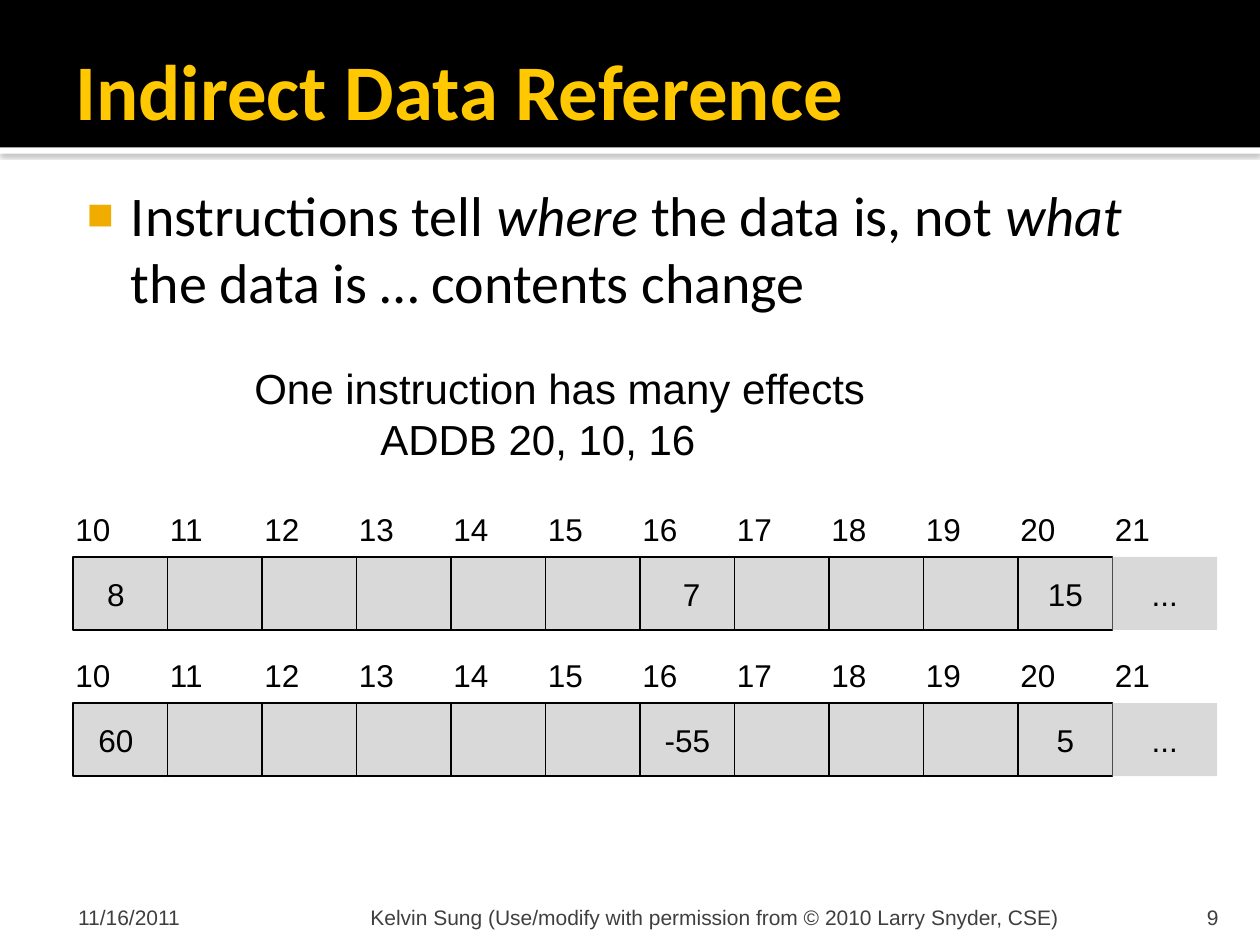
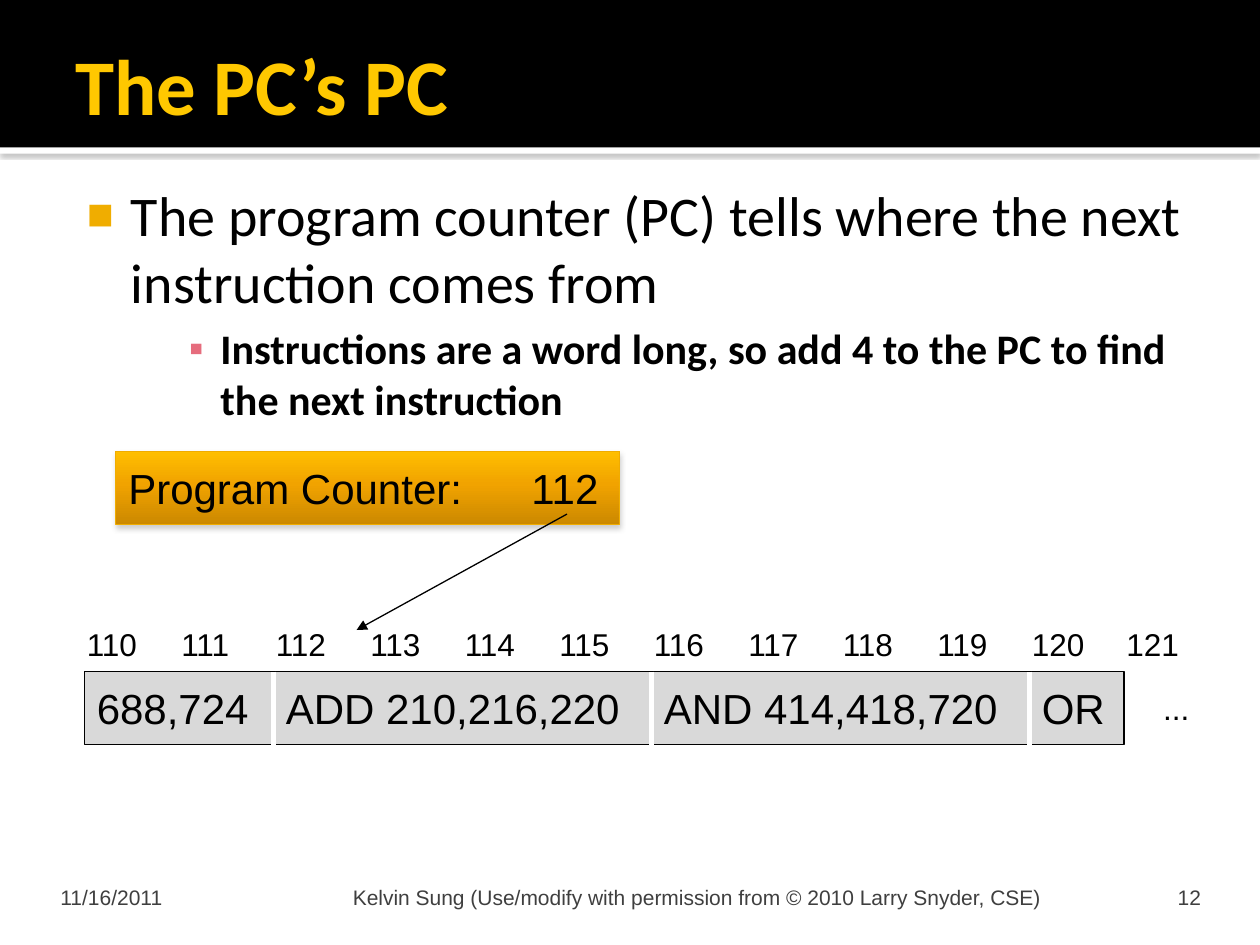
"""Build two slides on indirect data reference and the program counter."""
import copy

import lxml.etree
import pptx
import pptx.dml.color
import pptx.enum.shapes
import pptx.enum.text
import pptx.oxml.ns
import pptx.util

Inches = pptx.util.Inches
Pt = pptx.util.Pt
qn = pptx.oxml.ns.qn
child = lxml.etree.SubElement
Anchor = pptx.enum.text.MSO_ANCHOR
Align = pptx.enum.text.PP_ALIGN

BLACK, WHITE, GREY, FOOTER_INK = "000000", "FFFFFF", "D9D9D9", "3F3F3F"
TITLE_GOLD, BULLET_GOLD, BULLET_PINK, BORDER_GOLD = "FFC800", "F0AD00", "E66C7D", "F0AC00"
COUNTER_STOPS = [(0, "FFBF00"), (0.45, "F1A300"), (1, "CC8900")]
CELL_WIDTH, CELL_HEIGHT, CELL_COUNT = 0.75, 0.58, 11
LABEL_LEFT, LABEL_RISE = 0.08, 0.42


def color(hex_string):
    return pptx.dml.color.RGBColor.from_string(hex_string)


def add_box(page, place, lines=(), size=18, font="Arial", ink=BLACK, bold=False, align=Align.LEFT,
            anchor=Anchor.TOP, insets=(0.1, 0.05, 0.1, 0.05), wrap=False,
            fill=None, outline=None, outline_width=0.75, shadow=None):
    place = [Inches(length) for length in place]
    if fill:
        box = page.shapes.add_shape(pptx.enum.shapes.MSO_SHAPE.RECTANGLE, *place)
        box.fill.solid()
        box.fill.fore_color.rgb = color(fill)
        box.shadow.inherit = False
        if outline:
            box.line.color.rgb = color(outline)
            box.line.width = Pt(outline_width)
        else:
            box.line.fill.background()
        if shadow:
            alpha, blur, distance = shadow
            effects = box._element.spPr.find(qn("a:effectLst"))
            outer = child(effects, qn("a:outerShdw"), blurRad=str(Pt(blur)), dist=str(Pt(distance)),
                          dir="5400000", algn="t", rotWithShape="0")
            tint = child(outer, qn("a:srgbClr"), val="808080")
            child(tint, qn("a:alpha"), val=str(alpha * 1000))
    else:
        box = page.shapes.add_textbox(*place)
    frame = box.text_frame
    frame.word_wrap = wrap
    frame.vertical_anchor = anchor
    frame.margin_left, frame.margin_top, frame.margin_right, frame.margin_bottom = map(Inches, insets)
    for number, line in enumerate(lines):
        para = frame.add_paragraph() if number else frame.paragraphs[0]
        para.alignment = align
        for text, italic in [(line, False)] if isinstance(line, str) else line:
            span = para.add_run()
            span.text = text
            span.font.name, span.font.size = font, Pt(size)
            span.font.bold, span.font.italic = bold, italic
            span.font.color.rgb = color(ink)
    return box


deck = pptx.Presentation()
deck.slide_width, deck.slide_height = Inches(10), Inches(7.5)

outlines = [
    ("Indirect Data Reference", 1.08, "9", 0.5, 7.08,
     [[("Instructions tell ", False), ("where", True), (" the data is, not ", False),
       ("what", True), (" the data is … contents change", False)]]),
    ("The PC’s PC", 1, "12", 0.36, 6.92,
     ["The program counter (PC) tells where the next instruction comes from",
      "Instructions are a word long, so add 4 to the PC to find the next instruction"]),
]
bullet_levels = [("■", BULLET_GOLD, 80, 0.48, -0.35), ("▪", BULLET_PINK, 100, 1.19, -0.25)]

for title, title_height, page_number, footer_left, footer_top, points in outlines:
    page = deck.slides.add_slide(deck.slide_layouts[6])
    page.background.fill.solid()
    page.background.fill.fore_color.rgb = color(WHITE)
    add_box(page, (0, 1.17, 10, 0.05), fill=WHITE, shadow=(60, 2.5, 0.8))
    add_box(page, (0, 0, 10, 1.17), fill=BLACK)
    for offset, width, text, align, left_inset, right_inset in [
        (0, 2.33, "11/16/2011", Align.LEFT, 0.12, 0.05),
        (2.39, 6.02, "Kelvin Sung (Use/modify with permission from © 2010 Larry Snyder, CSE)",
         Align.LEFT, 0.05, 0.05),
        (8.47, 0.8, page_number, Align.RIGHT, 0.1, 0.1),
    ]:
        add_box(page, (footer_left + offset, footer_top, width, 0.3), [text], 12, ink=FOOTER_INK,
                align=align, anchor=Anchor.BOTTOM, insets=(left_inset, 0.05, right_inset, 0), wrap=True)
    add_box(page, (0.5, 0.17, 9, title_height), [title], 45, "Calibri", TITLE_GOLD, True,
            anchor=Anchor.MIDDLE, insets=(0.1, 0.05, 0.05, 0.05), wrap=True)
    body = add_box(page, (0.5, 1.33, 9, 5.67), points, 32, "Calibri",
                   insets=(0.06, 0.1, 0.1, 0.05), wrap=True)
    for level, para in enumerate(body.text_frame.paragraphs):
        symbol, tint, percent, margin, indent = bullet_levels[level]
        if level:
            para.space_before = Pt(4.8)
            para.runs[0].font.size = Pt(24)
            para.runs[0].font.bold = True
        settings = para._p.get_or_add_pPr()
        settings.set("marL", str(Inches(margin)))
        settings.set("indent", str(Inches(indent)))
        child(child(settings, qn("a:buClr")), qn("a:srgbClr"), val=tint)
        child(settings, qn("a:buSzPct"), val=str(percent * 1000))
        child(settings, qn("a:buFont"), typeface="Arial")
        child(settings, qn("a:buChar"), char=symbol)

reference_page, counter_page = deck.slides

effects_note = add_box(reference_page, (1.92, 2.83, 5.12, 0.91),
                       ["One instruction has many effects", "ADDB 20, 10, 16"], 24)
effects_note.text_frame.paragraphs[1]._p.get_or_add_pPr().set("marL", str(Inches(1)))

for cell_top, values in [(4.42, {0: "8 ", 6: " 7", 10: "15"}), (5.58, {0: "60 ", 6: "-55", 10: "5"})]:
    for index in range(CELL_COUNT):
        add_box(reference_page, (0.58 + index * CELL_WIDTH, cell_top, CELL_WIDTH, CELL_HEIGHT),
                [values[index]] if index in values else [], align=Align.CENTER,
                anchor=Anchor.MIDDLE, fill=GREY, outline=BLACK)

for page, row_left, row_top, first_address, rest_fill in [
    (reference_page, 0.58, 4.42, 10, GREY),
    (reference_page, 0.58, 5.58, 10, GREY),
    (counter_page, 0.67, 5.33, 110, None),
]:
    for index in range(CELL_COUNT + 1):
        add_box(page, (row_left + index * CELL_WIDTH - LABEL_LEFT, row_top - LABEL_RISE, 0.62, 0.4),
                [str(first_address + index)])
    add_box(page, (row_left + CELL_COUNT * CELL_WIDTH, row_top, 0.83, CELL_HEIGHT), ["..."],
            align=Align.CENTER, anchor=Anchor.MIDDLE, fill=rest_fill)

instruction_left = 0.67
dividers = []
for instruction, byte_count in [("688,724", 2), ("ADD 210,216,220", 4), ("AND 414,418,720", 4), ("OR", 1)]:
    width = byte_count * CELL_WIDTH
    add_box(counter_page, (instruction_left, 5.33, width, CELL_HEIGHT), [instruction], 24,
            anchor=Anchor.MIDDLE, fill=GREY, outline=BLACK)
    instruction_left += width
    dividers.append((instruction_left, 5.33, instruction_left, 5.92, WHITE, 3))
dividers.pop()

counter = add_box(counter_page, (0.92, 3.58, 4, CELL_HEIGHT), ["Program Counter:\t112"], 24,
                  anchor=Anchor.MIDDLE, wrap=True, fill=BORDER_GOLD, outline=BORDER_GOLD,
                  outline_width=0.5, shadow=(38, 3.1, 2))
tabs = child(counter.text_frame.paragraphs[0]._p.get_or_add_pPr(), qn("a:tabLst"))
child(tabs, qn("a:tab"), pos=str(Inches(3.2)), algn="l")
counter.fill.gradient()
counter.fill.gradient_angle = 270
stop_list = counter._element.spPr.find(".//" + qn("a:gsLst"))
stop_list.append(copy.deepcopy(stop_list[0]))
for stop, (position, tint) in zip(counter.fill.gradient_stops, COUNTER_STOPS):
    stop.position = position
    stop.color.rgb = color(tint)

pointer = (4.5, 4.08, 2.83, 5, BLACK, 0.75)
for *ends, tint, weight in [pointer] + dividers:
    line = counter_page.shapes.add_connector(pptx.enum.shapes.MSO_CONNECTOR.STRAIGHT, *map(Inches, ends))
    line.line.color.rgb = color(tint)
    line.line.width = Pt(weight)
    child(line._element.spPr, qn("a:effectLst"))
    if tint == BLACK:
        child(line.line._get_or_add_ln(), qn("a:tailEnd"), type="triangle")

deck.save("out.pptx")
